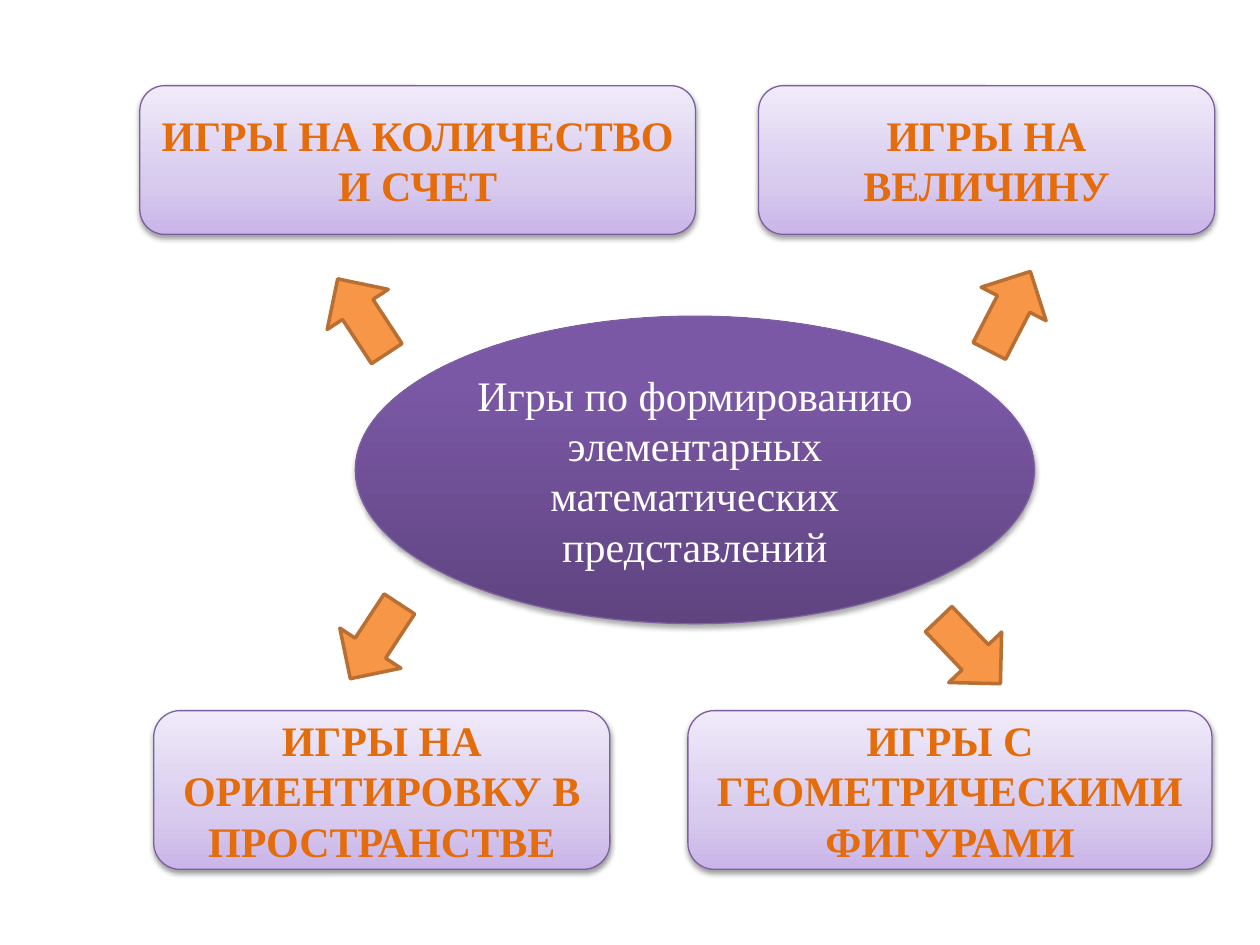
from pptx import Presentation, util as u
from pptx.dml.color import RGBColor
from pptx.enum import shapes, text
from pptx.oxml import parse_xml
from pptx.oxml.ns import nsdecls

KIND = shapes.MSO_SHAPE


class Theme:
    font = "Times New Roman"
    size = 24
    violet = "7D60A0"
    deep = {0: "5F4480", 80: "7B58A6", 100: "7C57A8"}
    pale = {0: "C9B5E8", 35: "D8CBEE", 100: "F0EAF9"}
    white = "FFFFFF"
    title = "E46C0A"
    edge = "953735"
    arrow = "F79646"
    rim = "B76F34"


def solid(color):
    return f'<a:solidFill><a:srgbClr val="{color}"/></a:solidFill>'


def node(xml):
    """Parse one DrawingML element, adding the namespace to its tag."""
    tag, rest = xml.split(" ", 1)
    return parse_xml(f"{tag} {nsdecls('a')} {rest}")


class Deck:
    def __init__(self, theme):
        self.theme = theme
        self.prs = Presentation()
        self.prs.slide_width, self.prs.slide_height = u.Inches(10), u.Inches(7.5)
        self.slide = self.prs.slides.add_slide(self.prs.slide_layouts[6])

    def shape(self, kind, box, line, width):
        item = self.slide.shapes.add_shape(kind, *map(u.Inches, box))
        item.shadow.inherit = False
        item.line.color.rgb = RGBColor.from_string(line)
        item.line.width = u.Pt(width)
        return item

    def blend(self, item, stops):
        """Fill the shape with a gradient that runs from bottom to top."""
        marks = "".join(
            f'<a:gs pos="{pos * 1000}"><a:srgbClr val="{color}"/></a:gs>'
            for pos, color in stops.items())
        item.element.spPr.insert(2, node(
            f'<a:gradFill rotWithShape="1"><a:gsLst>{marks}</a:gsLst>'
            '<a:lin ang="16200000" scaled="0"/></a:gradFill>'))

    def shade(self, item, drop, alpha):
        """Cast a soft black shadow straight down."""
        item.element.spPr.find(".//{*}effectLst").append(node(
            f'<a:outerShdw blurRad="{u.Pt(3.15)}" dist="{u.Pt(drop)}" '
            'dir="5400000" rotWithShape="0"><a:srgbClr val="000000">'
            f'<a:alpha val="{alpha * 1000}"/></a:srgbClr></a:outerShdw>'))

    def label(self, item, words, color, bold=False):
        frame = item.text_frame
        frame.word_wrap = True
        frame.vertical_anchor = text.MSO_ANCHOR.MIDDLE
        para = frame.paragraphs[0]
        para.alignment = text.PP_ALIGN.CENTER
        run = para.add_run()
        run.text = words
        style = {"name": self.theme.font, "size": u.Pt(self.theme.size), "bold": bold}
        for key, value in style.items():
            setattr(run.font, key, value)
        run.font.color.rgb = RGBColor.from_string(color)
        return run

    def oval(self, box, words):
        item = self.shape(KIND.OVAL, box, self.theme.violet, 0.75)
        self.blend(item, self.theme.deep)
        self.shade(item, 1.8, 35)
        self.label(item, words, self.theme.white)

    def card(self, box, words):
        item = self.shape(KIND.ROUNDED_RECTANGLE, box, self.theme.violet, 0.75)
        self.blend(item, self.theme.pale)
        self.shade(item, 1.6, 38)
        run = self.label(item, words, self.theme.title, bold=True)
        run.font._element.insert(0, node(
            f'<a:ln w="{u.Pt(0.71)}">{solid(self.theme.edge)}</a:ln>'))

    def arrow(self, left, top, turn):
        item = self.shape(KIND.RIGHT_ARROW, (left, top, 0.71, 0.58), self.theme.rim, 2)
        item.fill.solid()
        item.fill.fore_color.rgb = RGBColor.from_string(self.theme.arrow)
        item.rotation = turn


def main():
    deck = Deck(Theme)
    deck.oval((2.82, 2.51, 5.39, 2.44),
              "Игры по формированию элементарных математических представлений")

    upper, lower = (0.68, 1.18), (5.64, 1.26)
    cards = [
        (1.22, 3.62, lower, "ИГРЫ НА ОРИЕНТИРОВКУ В ПРОСТРАНСТВЕ"),
        (1.11, 4.41, upper, "ИГРЫ НА КОЛИЧЕСТВО И СЧЕТ"),
        (6.02, 3.62, upper, "ИГРЫ НА ВЕЛИЧИНУ"),
        (5.46, 4.16, lower, "ИГРЫ С ГЕОМЕТРИЧЕСКИМИ ФИГУРАМИ"),
    ]
    for left, width, (top, height), words in cards:
        deck.card((left, top, width, height), words)

    arrows = [(2.52, 2.22, 236.7), (7.66, 2.18, 297.3),
              (2.62, 4.8, 123.3), (7.34, 4.88, 46.3)]
    for spot in arrows:
        deck.arrow(*spot)

    deck.prs.save("out.pptx")


if __name__ == "__main__":
    main()
